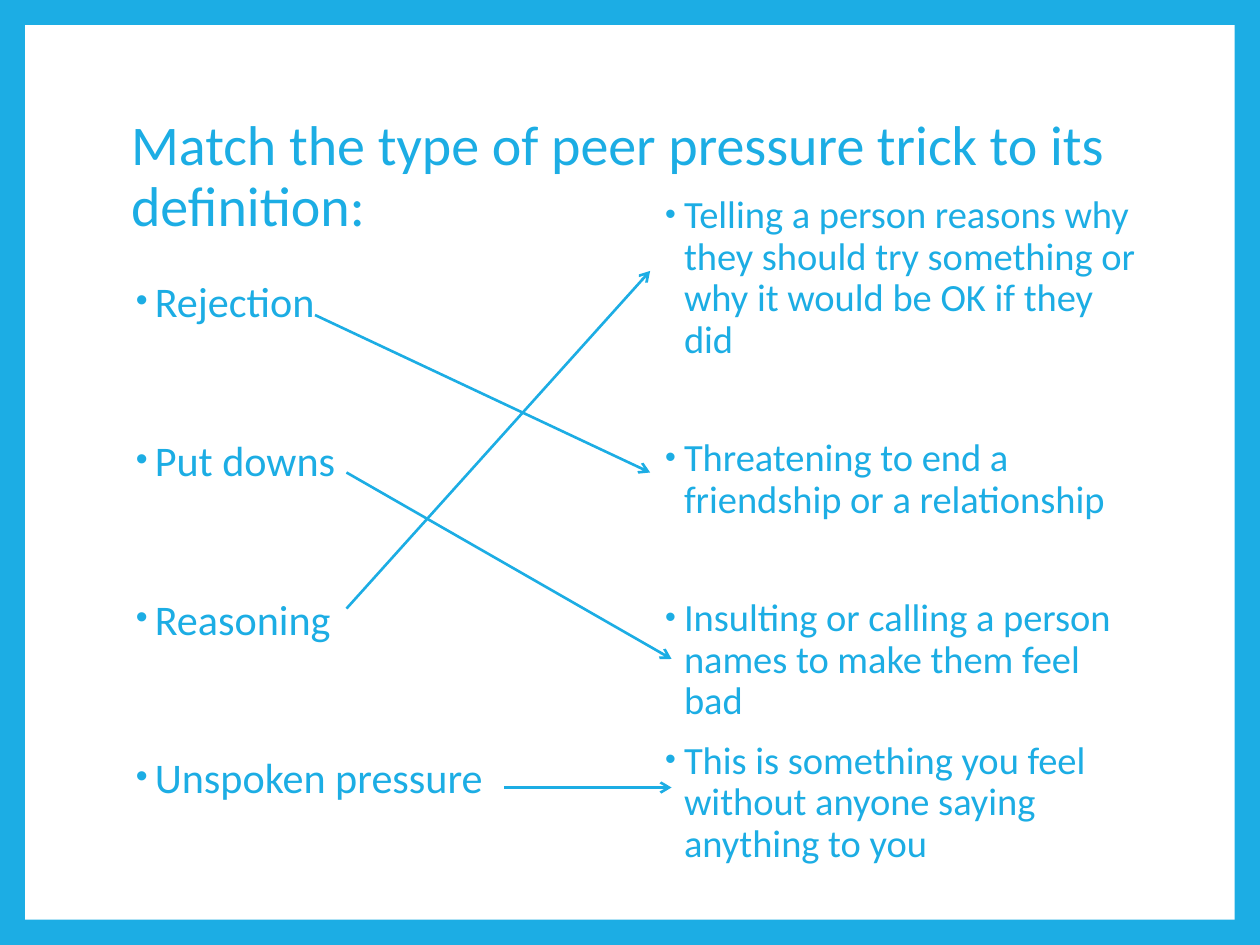
from lxml import etree
from pptx import Presentation, util as u
from pptx.dml.color import RGBColor
from pptx.enum import shapes, text
from pptx.oxml.ns import qn

COLORS = {"accent": "1CADE4", "panel": "FFFFFF"}


class MatchingSlide:
    """Holds the style and the current slide, and adds each kind of element."""

    font = "Calibri"
    accent = RGBColor.from_string(COLORS["accent"])

    def __init__(self, deck):
        self.slide = deck.slides.add_slide(deck.slide_layouts[5])
        self.shapes = self.slide.shapes
        backdrop = self.slide.background.fill
        backdrop.solid()
        backdrop.fore_color.rgb = self.accent

    def place(self, shape, box):
        shape.left, shape.top, shape.width, shape.height = map(u.Inches, box)

    def style(self, paragraph, size, line_spacing):
        paragraph.alignment = text.PP_ALIGN.LEFT
        paragraph.line_spacing = line_spacing
        for run in paragraph.runs:
            run.font.name = self.font
            run.font.size = u.Pt(size)
            run.font.color.rgb = self.accent

    def panel(self, box):
        panel = self.shapes.add_shape(shapes.MSO_SHAPE.RECTANGLE, *map(u.Inches, box))
        panel.shadow.inherit = False
        panel.fill.solid()
        panel.fill.fore_color.rgb = RGBColor.from_string(COLORS["panel"])
        panel.line.fill.background()
        self.shapes.title.element.addprevious(panel.element)

    def title(self, wording, box, size):
        title = self.shapes.title
        self.place(title, box)
        frame = title.text_frame
        frame.text = wording
        frame.word_wrap = True
        frame.auto_size = text.MSO_AUTO_SIZE.NONE
        frame.vertical_anchor = text.MSO_ANCHOR.MIDDLE
        self.style(frame.paragraphs[0], size, 0.9)

    def bullets(self, items, box, size, line_spacing):
        frame = self.shapes.add_textbox(*map(u.Inches, box)).text_frame
        frame.word_wrap = True
        frame.text = "\n".join(wording for wording, _ in items)
        for paragraph, (_, gap) in zip(frame.paragraphs, items):
            self.style(paragraph, size, line_spacing)
            paragraph.space_before = u.Pt(gap)
            self.bullet(paragraph)

    def bullet(self, paragraph):
        props = paragraph._p.get_or_add_pPr()
        props.set("marL", str(u.Inches(0.19)))
        props.set("indent", str(u.Inches(-0.15)))
        color = etree.SubElement(props, qn("a:buClr"))
        etree.SubElement(color, qn("a:srgbClr"), val=COLORS["accent"])
        etree.SubElement(props, qn("a:buSzPct"), val="80000")
        etree.SubElement(props, qn("a:buFont"), typeface="Arial")
        etree.SubElement(props, qn("a:buChar"), char="•")

    def arrow(self, start, end):
        arrow = self.shapes.add_connector(
            shapes.MSO_CONNECTOR.STRAIGHT, *map(u.Inches, start + end))
        arrow.line.color.rgb = self.accent
        arrow.line.width = u.Pt(1.5)
        etree.SubElement(arrow.line._get_or_add_ln(), qn("a:tailEnd"), type="arrow")
        etree.SubElement(arrow.element.spPr, qn("a:effectLst"))


def main():
    deck = Presentation()
    deck.slide_width, deck.slide_height = u.Inches(10), u.Inches(7.5)
    matching = MatchingSlide(deck)
    matching.panel((0.2, 0.2, 9.6, 7.1))
    matching.title("Match the type of peer pressure trick to its definition:",
                   (0.94, 0.67, 8.1, 1.48), 32)

    tricks = [("Rejection", 10), ("Put downs", 70.4),
              ("Reasoning", 70.4), ("Unspoken pressure", 70.4)]
    definitions = [
        ("Telling a person reasons why they should try something "
         "or why it would be OK if they did", 10),
        ("Threatening to end a friendship or a relationship", 44),
        ("Insulting or calling a person names to make them feel bad", 44),
        ("This is something you feel without anyone saying anything to you", 10),
    ]
    matching.bullets(tricks, (0.94, 2.25, 3.9, 4.4), 24.1, 0.7)
    matching.bullets(definitions, (5.14, 1.5, 3.98, 5.58), 22, 0.9)

    matches = [((2.5, 2.5), (5.16, 3.75)), ((2.75, 3.75), (5.33, 5.23)),
               ((2.75, 4.83), (5.16, 2.15)), ((4, 6.25), (5.33, 6.25))]
    for trick_end, definition_start in matches:
        matching.arrow(trick_end, definition_start)
    deck.save("out.pptx")


if __name__ == "__main__":
    main()
